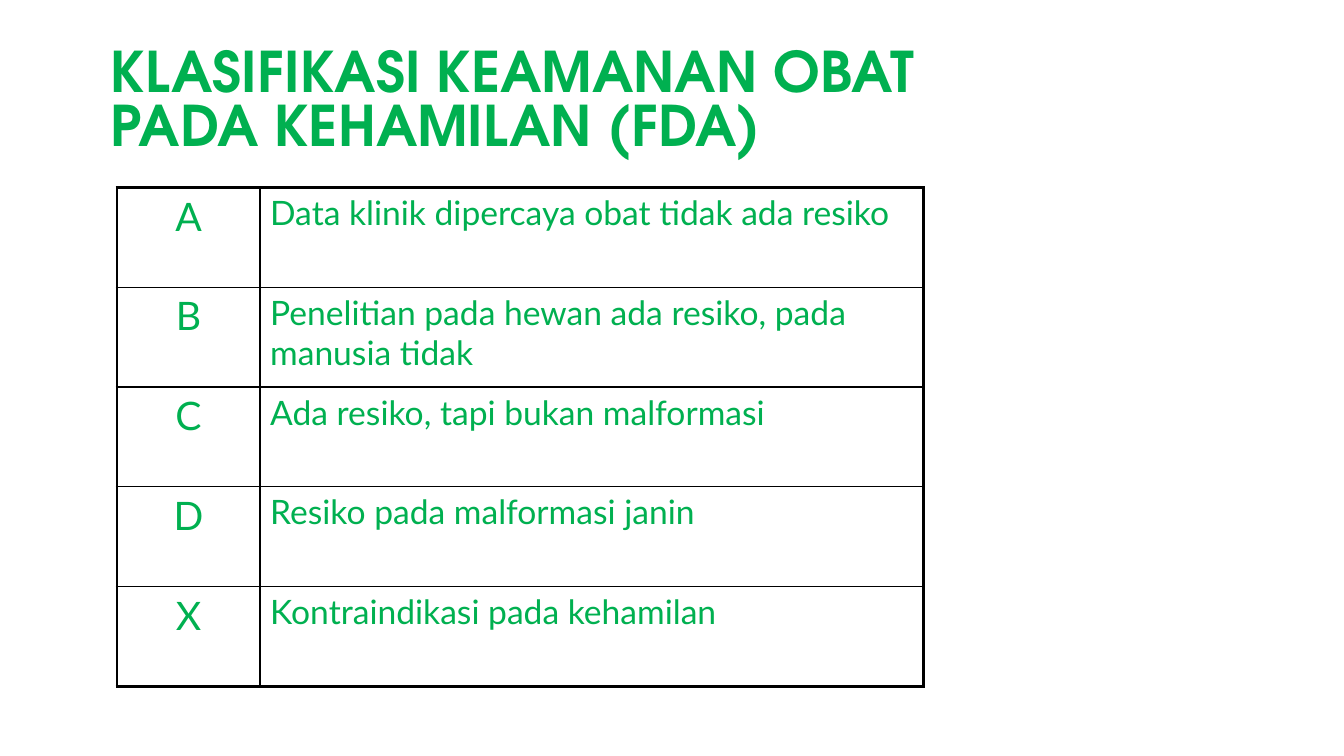
from lxml import etree
from pptx import Presentation
from pptx.dml.color import RGBColor
from pptx.enum.text import MSO_ANCHOR, MSO_AUTO_SIZE, PP_ALIGN
from pptx.oxml.ns import qn
from pptx.util import Inches, Pt

GREEN = RGBColor(0x00, 0xB0, 0x50)
BLACK = RGBColor(0x00, 0x00, 0x00)
TITLE_FONT = "TeX Gyre Adventor"
BODY_FONT = "Lato"
LEFT, CENTER = PP_ALIGN.LEFT, PP_ALIGN.CENTER
BOTTOM = MSO_ANCHOR.BOTTOM
NO_AUTOFIT = MSO_AUTO_SIZE.NONE
TITLE_ONLY = 5

OUTER_WIDTH, INNER_WIDTH = 2.25, 1
COLUMN_WIDTHS = (1.42, 6.58)
COLUMN_SIZES = (28, 24)
COLUMN_ALIGNMENTS = (CENTER, LEFT)
ROW_HEIGHT = 0.99

TITLE_LINES = ("KLASIFIKASI KEAMANAN OBAT ", "PADA KEHAMILAN (FDA)")
CATEGORIES = (
    ("A", "Data klinik dipercaya obat tidak ada resiko"),
    ("B", "Penelitian pada hewan ada resiko, pada manusia tidak"),
    ("C", "Ada resiko, tapi bukan malformasi"),
    ("D", "Resiko pada malformasi janin"),
    ("X", "Kontraindikasi pada kehamilan"),
)


class SlideBuilder:
    def __init__(self, slide):
        self.slide = slide

    def add_run(self, paragraph, text, font_name, size, bold=False):
        run = paragraph.add_run()
        run.text = text
        run.font.name = font_name
        run.font.size = Pt(size)
        run.font.bold = bold
        run.font.color.rgb = GREEN

    def set_title(self, lines, left, top, width, height):
        title = self.slide.shapes.title
        title.left, title.top = Inches(left), Inches(top)
        title.width, title.height = Inches(width), Inches(height)
        frame = title.text_frame
        frame.word_wrap = True
        frame.auto_size = NO_AUTOFIT
        frame.vertical_anchor = BOTTOM
        paragraph = frame.paragraphs[0]
        paragraph.alignment = LEFT
        paragraph.line_spacing = 0.8
        for index, line in enumerate(lines):
            if index:
                paragraph.add_line_break()
            self.add_run(paragraph, line, TITLE_FONT, 40, bold=True)

    def set_borders(self, cell, widths):
        """Draw black borders, given as a map from side tag to points."""
        properties = cell._tc.get_or_add_tcPr()
        for position, (side, width) in enumerate(widths.items()):
            line = etree.Element(qn(f"a:{side}"), w=str(Pt(width)))
            fill = etree.SubElement(line, qn("a:solidFill"))
            etree.SubElement(fill, qn("a:srgbClr"), val=str(BLACK))
            properties.insert(position, line)

    def add_table(self, rows, left, top):
        last_row, last_column = len(rows) - 1, len(COLUMN_WIDTHS) - 1
        table = self.slide.shapes.add_table(
            len(rows), len(COLUMN_WIDTHS), Inches(left), Inches(top),
            Inches(sum(COLUMN_WIDTHS)), Inches(ROW_HEIGHT * len(rows))).table
        table.first_row = table.horz_banding = False
        for column, width in zip(table.columns, COLUMN_WIDTHS):
            column.width = Inches(width)
        for row_index, texts in enumerate(rows):
            table.rows[row_index].height = Inches(ROW_HEIGHT)
            for column_index, text in enumerate(texts):
                cell = table.cell(row_index, column_index)
                cell.fill.background()
                paragraph = cell.text_frame.paragraphs[0]
                paragraph.alignment = COLUMN_ALIGNMENTS[column_index]
                self.add_run(paragraph, text, BODY_FONT, COLUMN_SIZES[column_index])
                outer_sides = {
                    "lnL": column_index == 0,
                    "lnR": column_index == last_column,
                    "lnT": row_index == 0,
                    "lnB": row_index == last_row,
                }
                self.set_borders(cell, {
                    side: OUTER_WIDTH if outer else INNER_WIDTH
                    for side, outer in outer_sides.items()})


def main():
    presentation = Presentation()
    presentation.slide_width = Inches(13.33)
    presentation.slide_height = Inches(7.5)
    layout = presentation.slide_layouts[TITLE_ONLY]
    builder = SlideBuilder(presentation.slides.add_slide(layout))
    builder.set_title(TITLE_LINES, 1, 0.44, 9.5, 1.17)
    builder.add_table(CATEGORIES, 1.16, 1.86)
    presentation.save("out.pptx")


if __name__ == "__main__":
    main()
